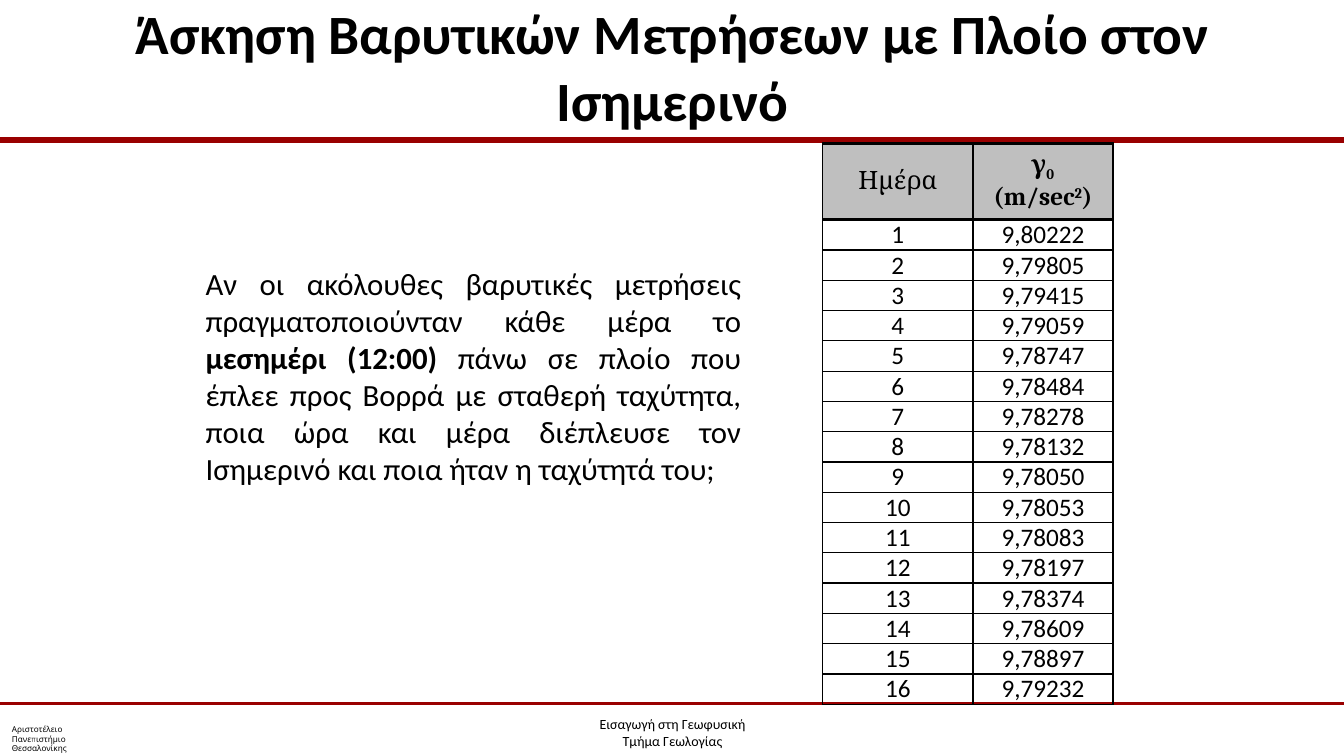
from typing import NamedTuple

from lxml import etree
from pptx import Presentation
from pptx import util as u
from pptx.dml.color import RGBColor
from pptx.enum import shapes, text
from pptx.oxml import ns

BLACK, RED, GREY = "000000", "990000", "BFBFBF"
CENTER = text.PP_ALIGN.CENTER
MIDDLE = text.MSO_ANCHOR.MIDDLE


class Run(NamedTuple):
    text: str
    bold: bool = False
    baseline: int = 0  # percent of the font size


class Rule(NamedTuple):
    y: float
    width: float


class Box(NamedTuple):
    left: float
    top: float
    width: float
    height: float


RULES = [Rule(1.39, 4), Rule(6.98, 2)]
HEADER = [
    [Run("Ημέρα")],
    [Run("γ", True), Run("0", True, -25), Run(" (m/sec", True),
     Run("2", True, 30), Run(")", True)],
]
GRAVITY = [
    "9,80222", "9,79805", "9,79415", "9,79059", "9,78747", "9,78484",
    "9,78278", "9,78132", "9,78050", "9,78053", "9,78083", "9,78197",
    "9,78374", "9,78609", "9,78897", "9,79232",
]
QUESTION = [
    Run("Αν οι ακόλουθες βαρυτικές μετρήσεις πραγματοποιούνταν κάθε μέρα το "),
    Run("μεσημέρι (12:00) ", True),
    Run("πάνω σε πλοίο που έπλεε προς Βορρά με σταθερή ταχύτητα, ποια ώρα και "
        "μέρα διέπλευσε τον Ισημερινό και ποια ήταν η ταχύτητά του;"),
]


def rgb(color: str) -> RGBColor:
    return RGBColor.from_string(color)


def write(p, runs: list[Run], size: float, font: str = "Calibri",
          align=CENTER) -> None:
    """Fill a paragraph with runs that share one font, size and colour."""
    p.alignment = align
    p.font.size = u.Pt(size)
    p.font.name = font
    p.font.color.rgb = rgb(BLACK)
    for run in runs:
        r = p.add_run()
        r.text = run.text
        r.font.bold = run.bold
        if run.baseline:
            r._r.get_or_add_rPr().set("baseline", str(run.baseline * 1000))


def add_rule(s, rule: Rule, width: int) -> None:
    line = s.shapes.add_connector(shapes.MSO_CONNECTOR.STRAIGHT, 0,
                                  u.Inches(rule.y), width, u.Inches(rule.y))
    line.line.color.rgb = rgb(RED)
    line.line.width = u.Pt(rule.width)
    etree.SubElement(line._element.spPr, ns.qn("a:effectLst"))


def add_text(s, box: Box, paragraphs: list[list[Run]], size: float,
             font: str = "Calibri", align=CENTER):
    tf = s.shapes.add_textbox(*map(u.Inches, box)).text_frame
    tf.word_wrap = True
    for i, runs in enumerate(paragraphs):
        p = tf.add_paragraph() if i else tf.paragraphs[0]
        write(p, runs, size, font, align)
    return tf


def set_borders(cell, top: float, bottom: float) -> None:
    """Draw black cell borders; the sides are 1 pt wide."""
    tcPr = cell._tc.get_or_add_tcPr()
    widths = {"lnL": 1, "lnR": 1, "lnT": top, "lnB": bottom}
    for i, (tag, width) in enumerate(widths.items()):
        ln = etree.Element(ns.qn(f"a:{tag}"), w=str(u.Pt(width)))
        fill = etree.SubElement(ln, ns.qn("a:solidFill"))
        etree.SubElement(fill, ns.qn("a:srgbClr"), val=BLACK)
        tcPr.insert(i, ln)


def add_gravity_table(s) -> None:
    rows = HEADER, *([[Run(str(day))], [Run(value)]]
                     for day, value in enumerate(GRAVITY, 1))
    box = Box(8.16, 1.42, 2.88, 5.56)
    table = s.shapes.add_table(len(rows), 2, *map(u.Inches, box)).table
    table.first_row = table.horz_banding = False
    for column, width in zip(table.columns, (1.49, 1.39)):
        column.width = u.Inches(width)
    for i, row in enumerate(rows):
        is_header = i == 0
        table.rows[i].height = u.Inches(0.76 if is_header else 0.3)
        for j, runs in enumerate(row):
            cell = table.cell(i, j)
            cell.margin_top = cell.margin_bottom = 0
            if is_header:
                cell.vertical_anchor = MIDDLE
                cell.fill.solid()
                cell.fill.fore_color.rgb = rgb(GREY)
            else:
                cell.fill.background()
            set_borders(cell, 2.25 if i < 2 else 1, 2.25 if is_header else 1)
            write(cell.text_frame.paragraphs[0], runs, 18,
                  "Cambria" if is_header else "Calibri")


def main() -> None:
    prs = Presentation()
    prs.slide_width, prs.slide_height = u.Inches(13.33), u.Inches(7.5)
    s = prs.slides.add_slide(prs.slide_layouts[5])

    title = s.shapes.title
    title.left, title.top = u.Inches(0.67), u.Inches(0.03)
    title.width, title.height = u.Inches(12), u.Inches(1.25)
    tf = title.text_frame
    tf.auto_size = text.MSO_AUTO_SIZE.NONE
    tf.vertical_anchor = MIDDLE
    write(tf.paragraphs[0],
          [Run("Άσκηση Βαρυτικών Μετρήσεων με Πλοίο στον Ισημερινό", True)],
          39.6)

    for rule in RULES:
        add_rule(s, rule, prs.slide_width)

    university = ["Αριστοτέλειο", "Πανεπιστήμιο", "Θεσσαλονίκης"]
    tf = add_text(s, Box(0.02, 7.16, 1.05, 0.34),
                  [[Run(word)] for word in university], 5.8, "Quicksand",
                  text.PP_ALIGN.LEFT)
    tf.vertical_anchor = MIDDLE

    tf = add_text(s, Box(4.57, 6.9, 4.2, 0.6),
                  [[Run("Εισαγωγή στη Γεωφυσική")], [Run("Τμήμα Γεωλογίας")]],
                  10)
    tf.margin_top = tf.margin_bottom = 0
    tf.paragraphs[0].line_spacing = 2.2

    tf = add_text(s, Box(1.94, 2.58, 5.51, 2.32), [QUESTION], 22,
                  align=text.PP_ALIGN.JUSTIFY)
    tf.auto_size = text.MSO_AUTO_SIZE.SHAPE_TO_FIT_TEXT

    add_gravity_table(s)
    prs.save("out.pptx")


if __name__ == "__main__":
    main()
